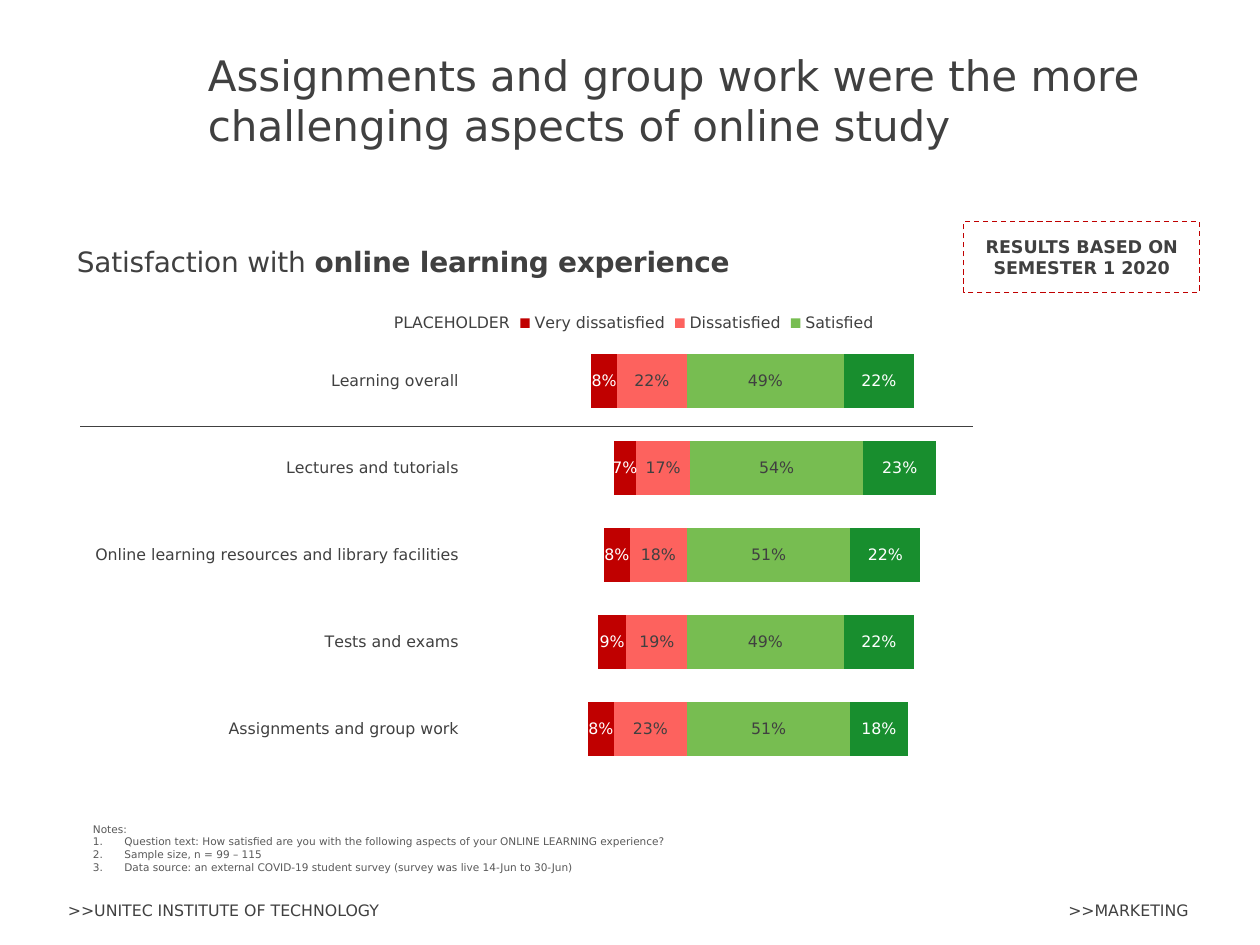
"""Build the slide on satisfaction with online learning."""
from lxml.etree import SubElement
from pptx import Presentation
from pptx.chart.data import CategoryChartData
from pptx.dml.color import RGBColor
from pptx.enum.chart import (XL_CHART_TYPE, XL_LABEL_POSITION, XL_LEGEND_POSITION,
                             XL_TICK_LABEL_POSITION, XL_TICK_MARK)
from pptx.enum.dml import MSO_LINE
from pptx.enum.shapes import MSO_CONNECTOR, MSO_SHAPE
from pptx.enum.text import MSO_ANCHOR, PP_ALIGN
from pptx.oxml import parse_xml
from pptx.oxml.ns import nsdecls, qn
from pptx.util import Pt

FONT = "DejaVu Sans"
COLORS = {
    "text": "404040",
    "notes": "595959",
    "white": "FFFFFF",
    "very dissatisfied": "C00000",
    "dissatisfied": "FD625E",
    "satisfied": "77BD51",
    "very satisfied": "188E2E",
}
CATEGORIES = ["Learning overall", "Lectures and tutorials",
              "Online learning resources and library facilities",
              "Tests and exams", "Assignments and group work"]
SERIES = [
    ("PLACEHOLDER", (0.70, 0.77, 0.74, 0.72, 0.69), None),
    ("Very dissatisfied", (0.08, 0.07, 0.08, 0.09, 0.08), "white"),
    ("Dissatisfied", (0.22, 0.17, 0.18, 0.19, 0.23), "text"),
    ("Satisfied", (0.49, 0.54, 0.51, 0.49, 0.51), "text"),
    ("Very satisfied", (0.22, 0.23, 0.22, 0.22, 0.18), "white"),
]
NOTES = [
    "Question text: How satisfied are you with the following aspects of your "
    "ONLINE LEARNING experience?",
    "Sample size, n = 99 – 115",
    "Data source: an external COVID-19 student survey (survey was live 14-Jun to 30-Jun)",
]


def rgb(name):
    """Return the named colour."""
    return RGBColor.from_string(COLORS[name])


def format_font(font, size=9, color="text", bold=False):
    """Set the face, size, colour and weight of a font."""
    font.name, font.size, font.bold = FONT, Pt(size), bold
    font.color.rgb = rgb(color)


def write(para, text, align=PP_ALIGN.LEFT, **style):
    """Add a formatted span of text to a paragraph."""
    para.alignment = align
    span = para.add_run()
    span.text = text
    format_font(span.font, **style)


def add_text(page, bounds, text, anchor=MSO_ANCHOR.TOP, **style):
    """Add a wrapping text box and return its frame."""
    frame = page.shapes.add_textbox(*map(Pt, bounds)).text_frame
    frame.word_wrap = True
    frame.vertical_anchor = anchor
    write(frame.paragraphs[0], text, **style)
    return frame


def add_title(page, bounds, text):
    """Move the title placeholder and fill it."""
    title = page.shapes.title
    title.left, title.top, title.width, title.height = map(Pt, bounds)
    title.text_frame.vertical_anchor = MSO_ANCHOR.MIDDLE
    write(title.text_frame.paragraphs[0], text, size=24)


def add_notes(page, bounds):
    """Add the numbered notes below the chart."""
    style = {"size": 6, "color": "notes"}
    frame = add_text(page, bounds, "Notes:", **style)
    for note in NOTES:
        para = frame.add_paragraph()
        properties = para._p.get_or_add_pPr()
        properties.set("marL", str(Pt(18)))
        properties.set("indent", str(-Pt(18)))
        SubElement(properties, qn("a:buFont"), typeface="+mj-lt")
        SubElement(properties, qn("a:buAutoNum"), type="arabicPeriod")
        write(para, note, **style)


def add_badge(page, bounds, text):
    """Add the dashed frame that states the survey period."""
    badge = page.shapes.add_shape(MSO_SHAPE.RECTANGLE, *map(Pt, bounds))
    badge.shadow.inherit = False
    badge.fill.background()
    badge.line.color.rgb = rgb("very dissatisfied")
    badge.line.width = Pt(0.75)
    badge.line.dash_style = MSO_LINE.DASH
    badge.text_frame.word_wrap = True
    badge.text_frame.vertical_anchor = MSO_ANCHOR.MIDDLE
    write(badge.text_frame.paragraphs[0], text, PP_ALIGN.CENTER, size=10, bold=True)


def add_rule(page, left, right, top):
    """Add the thin horizontal line."""
    rule = page.shapes.add_connector(MSO_CONNECTOR.STRAIGHT, Pt(left), Pt(top), Pt(right), Pt(top))
    rule.line.color.rgb = rgb("text")
    rule.line.width = Pt(0.25)
    SubElement(rule._element.spPr, qn("a:effectLst"))


def place(element, index, inner=False, **fractions):
    """Give a chart part a manual layout in fractions of the chart."""
    old = element.find(qn("c:layout"))
    if old is not None:
        index = element.index(old)
        element.remove(old)
    layout = parse_xml(f"<c:layout {nsdecls('c')}><c:manualLayout/></c:layout>")
    manual = layout[0]
    if inner:
        SubElement(manual, qn("c:layoutTarget"), val="inner")
    for mode in ("xMode", "yMode"):
        SubElement(manual, qn(f"c:{mode}"), val="edge")
    for name, value in fractions.items():
        SubElement(manual, qn(f"c:{name}"), val=str(value))
    element.insert(index, layout)


def format_axes(chart):
    """Hide the axis lines and ticks and set their range."""
    for axis in (chart.category_axis, chart.value_axis):
        axis.major_tick_mark = axis.minor_tick_mark = XL_TICK_MARK.NONE
        axis.has_major_gridlines = False
        axis.format.line.fill.background()
        format_font(axis.tick_labels.font)
    chart.category_axis.reverse_order = True
    chart.value_axis.tick_label_position = XL_TICK_LABEL_POSITION.NONE
    chart.value_axis.minimum_scale = 0.3
    chart.value_axis.maximum_scale = 1.8


def format_series(plot):
    """Colour the bars and label them."""
    plot.gap_width, plot.overlap, plot.vary_by_categories = 60, 100, False
    for series, (name, _, label_color) in zip(plot.series, SERIES):
        if label_color is None:
            series.format.fill.background()
            continue
        series.format.fill.solid()
        series.format.fill.fore_color.rgb = rgb(name.lower())
        labels = series.data_labels
        labels.show_value = True
        labels.number_format, labels.number_format_is_linked = "###0%", False
        labels.position = XL_LABEL_POSITION.CENTER
        format_font(labels.font, color=label_color)


def format_legend(chart):
    """Show the legend above the bars with its first entry deleted."""
    chart.has_legend = True
    legend = chart.legend
    legend.position = XL_LEGEND_POSITION.TOP
    legend.include_in_layout = False
    format_font(legend.font)
    entry = parse_xml(f'<c:legendEntry {nsdecls("c")}><c:idx val="0"/>'
                      '<c:delete val="1"/></c:legendEntry>')
    legend._element.insert(1, entry)
    place(legend._element, 2, x=0.27, y=0.13)


def add_satisfaction_chart(page, bounds):
    """Add the stacked bars of satisfaction by aspect."""
    data = CategoryChartData(number_format="0%")
    data.categories = CATEGORIES
    for name, values, _ in SERIES:
        data.add_series(name, values)
    chart = page.shapes.add_chart(XL_CHART_TYPE.BAR_STACKED, *map(Pt, bounds), data).chart
    format_font(chart.font)
    chart.has_title = True
    para = chart.chart_title.text_frame.paragraphs[0]
    write(para, "Satisfaction with ", size=16)
    write(para, "online learning experience", size=16, bold=True)
    place(chart.chart_title._element, 1, x=0, y=0.01)
    format_axes(chart)
    format_series(chart.plots[0])
    format_legend(chart)
    plot_area = chart._chartSpace.find(qn("c:chart")).find(qn("c:plotArea"))
    place(plot_area, 0, inner=True, x=0.35, y=0.18, w=0.43, h=0.77)


def main():
    """Build and save the deck."""
    deck = Presentation()
    deck.slide_width, deck.slide_height = Pt(720), Pt(540)
    page = deck.slides.add_slide(deck.slide_layouts[5])
    add_title(page, (111.6, 36.7, 566.6, 40.3),
              "Assignments and group work were the more challenging aspects of online study")
    add_satisfaction_chart(page, (41.8, 134.6, 637.2, 323.3))
    add_notes(page, (46, 466.6, 583, 19.4))
    add_rule(page, 46, 556, 243.4)
    add_badge(page, (550.8, 126.7, 134.6, 40.3), "RESULTS BASED ON SEMESTER 1 2020")
    add_text(page, (31.7, 511.2, 293, 18), ">>UNITEC INSTITUTE OF TECHNOLOGY")
    add_text(page, (387.4, 511.2, 298.8, 18), ">>MARKETING",
             anchor=MSO_ANCHOR.MIDDLE, align=PP_ALIGN.RIGHT)
    deck.save("out.pptx")


if __name__ == "__main__":
    main()
